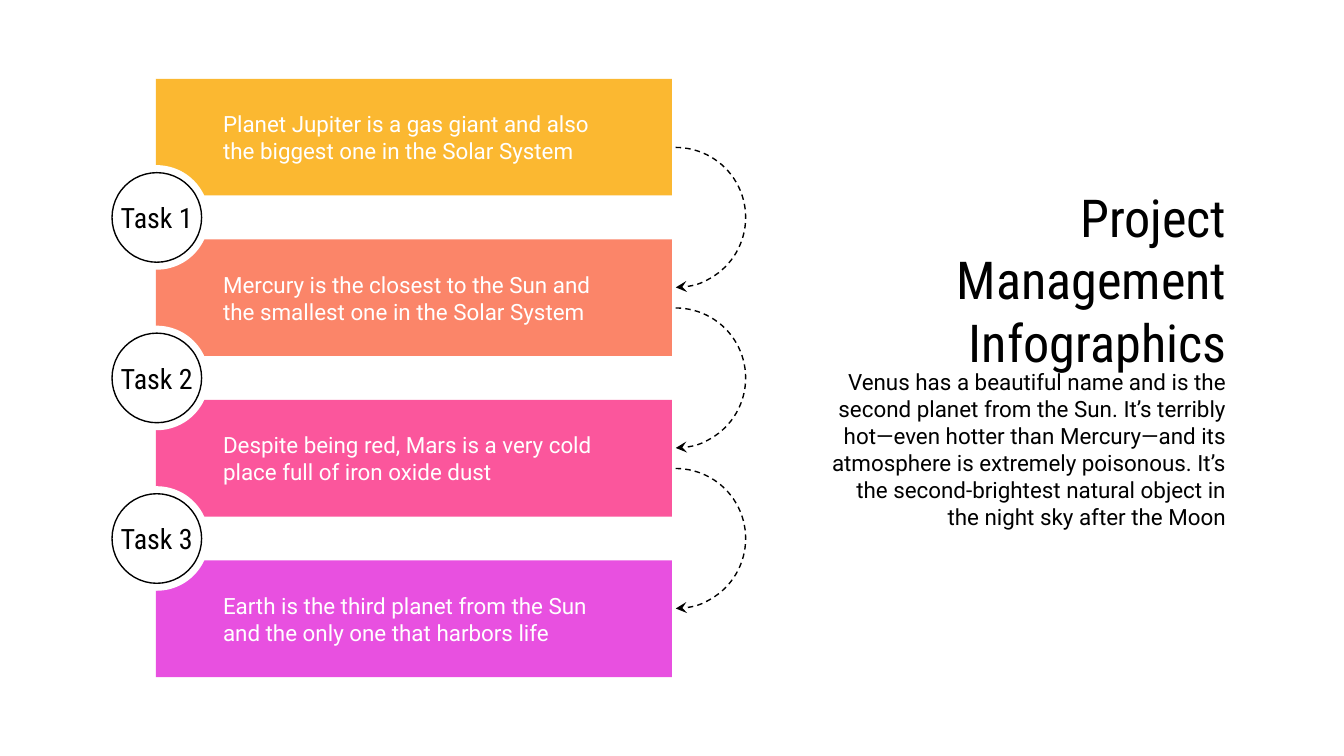
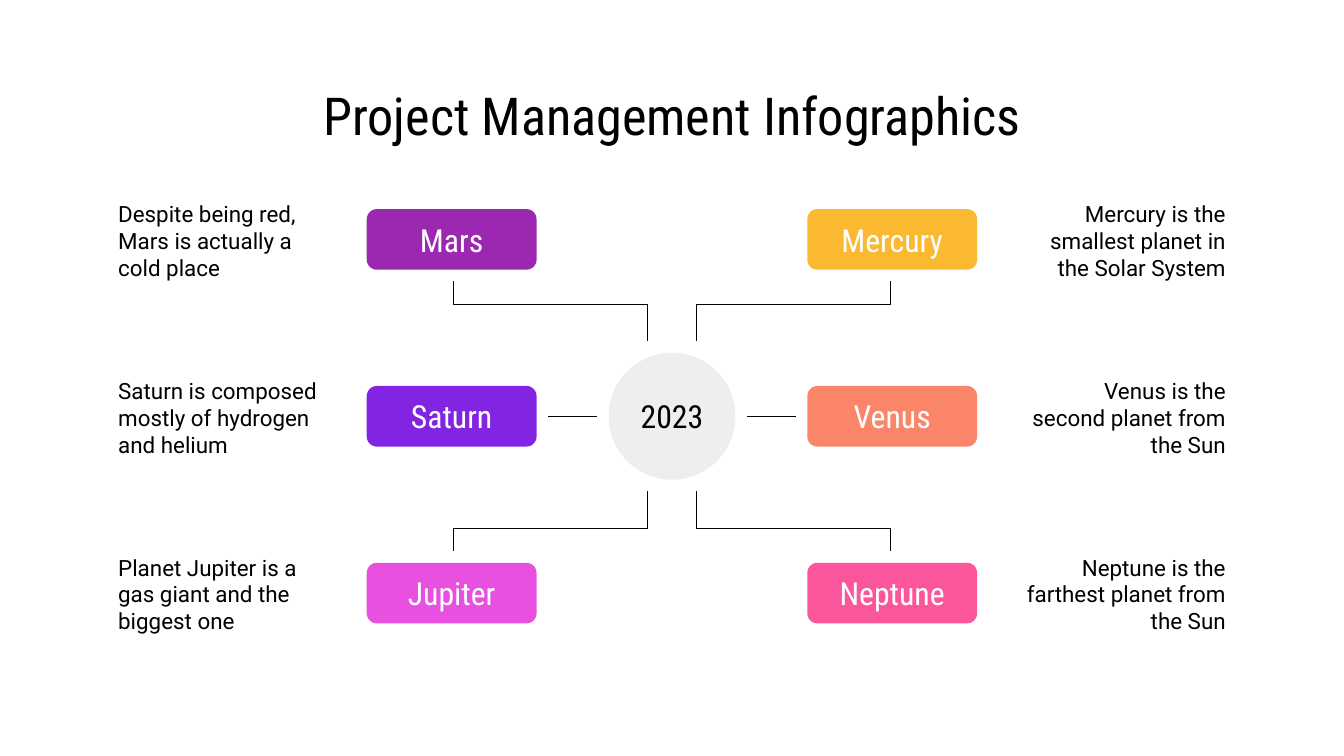
from dataclasses import dataclass

from lxml import etree
from pptx import Presentation
from pptx.dml.color import RGBColor
from pptx.enum.dml import MSO_LINE
from pptx.enum.shapes import MSO_CONNECTOR, MSO_SHAPE
from pptx.enum.text import MSO_ANCHOR, PP_ALIGN
from pptx.oxml.ns import qn
from pptx.util import Pt

LEFT, CENTER, RIGHT = PP_ALIGN.LEFT, PP_ALIGN.CENTER, PP_ALIGN.RIGHT
MIDDLE = MSO_ANCHOR.MIDDLE
RECT, ROUND_RECT = MSO_SHAPE.RECTANGLE, MSO_SHAPE.ROUNDED_RECTANGLE
OVAL, ARC = MSO_SHAPE.OVAL, MSO_SHAPE.ARC
STRAIGHT = MSO_CONNECTOR.STRAIGHT
DASH = MSO_LINE.DASH


@dataclass(frozen=True)
class Theme:
    head_font: str = "Roboto Condensed"
    body_font: str = "Roboto"
    title_size: float = 28
    label_size: float = 17
    task_size: float = 15
    body_size: float = 12
    line_width: float = 0.75
    black: str = "000000"
    white: str = "FFFFFF"
    grey: str = "EEEEEE"
    yellow: str = "FBB831"
    coral: str = "FB8569"
    pink: str = "FB569C"
    magenta: str = "E850E0"
    purple: str = "9C27B0"
    violet: str = "8225E2"


T = Theme()
TITLE = "Project Management Infographics"
WIDTH, HEIGHT = 720, 405
MARGIN = 56.25
INSET = 7.2

# Task slide
BARS = [
    ("Planet Jupiter is a gas giant and also the biggest one in the Solar System", T.yellow),
    ("Mercury is the closest to the Sun and the smallest one in the Solar System", T.coral),
    ("Despite being red, Mars is a very cold place full of iron oxide dust", T.pink),
    ("Earth is the third planet from the Sun and the only one that harbors life", T.magenta),
]
VENUS_STORY = (
    "Venus has a beautiful name and is the second planet from the Sun. It’s terribly "
    "hot—even hotter than Mercury—and its atmosphere is extremely poisonous. It’s "
    "the second-brightest natural object in the night sky after the Moon"
)
BAR_X, BAR_Y, BAR_W, BAR_H, BAR_PITCH = 83.5, 42.25, 276.5, 62.5, 86
HALO, DISC, ARC_SIZE = 56, 48, 75

# Planet slide: rows of (left planet, right planet)
PLANETS = [
    (("Mars", "Despite being red, Mars is actually a cold place", T.purple),
     ("Mercury", "Mercury is the smallest planet in the Solar System", T.yellow)),
    (("Saturn", "Saturn is composed mostly of hydrogen and helium", T.violet),
     ("Venus", "Venus is the second planet from the Sun", T.coral)),
    (("Jupiter", "Planet Jupiter is a gas giant and the biggest one", T.magenta),
     ("Neptune", "Neptune is the farthest planet from the Sun", T.pink)),
]
HUB_X, HUB_Y, HUB_SIZE = 360, 223, 68
ROW_PITCH, GAP = 94.75, 6.25
PILL_X, PILL_W, PILL_H = 196.5, 91, 32.5
NOTE_W, NOTE_H = 121, 59
ELBOW_OUTER, ELBOW_INNER, ELBOW_BEND = 117, 13, 60


def set_text(sp, text, size, font, color, align=LEFT, side_inset=INSET, wrap=True):
    tf = sp.text_frame
    frame_format = {
        "word_wrap": wrap, "vertical_anchor": MIDDLE,
        "margin_left": Pt(side_inset), "margin_right": Pt(side_inset),
        "margin_top": Pt(INSET), "margin_bottom": Pt(INSET),
    }
    for name, value in frame_format.items():
        setattr(tf, name, value)
    p = tf.paragraphs[0]
    p.alignment = align
    r = p.add_run()
    for name, value in {"text": text}.items():
        setattr(r, name, value)
    for name, value in {"size": Pt(size), "name": font}.items():
        setattr(r.font, name, value)
    r.font.color.rgb = RGBColor.from_string(color)


def set_line(sp):
    sp.line.color.rgb = RGBColor.from_string(T.black)
    sp.line.width = Pt(T.line_width)


def add_box(shapes, kind, x, y, w, h, fill=None, lined=False):
    sp = shapes.add_shape(kind, Pt(x), Pt(y), Pt(w), Pt(h))
    sp.shadow.inherit = False
    if fill:
        sp.fill.solid()
        sp.fill.fore_color.rgb = RGBColor.from_string(fill)
    else:
        sp.fill.background()
    if lined:
        set_line(sp)
    else:
        sp.line.fill.background()
    return sp


def add_circle(shapes, cx, cy, size, fill, lined=False):
    return add_box(shapes, OVAL, cx - size / 2, cy - size / 2, size, size, fill, lined)


def add_text(shapes, x, y, w, h, text, size=T.body_size, font=T.body_font, align=LEFT):
    sp = shapes.add_textbox(Pt(x), Pt(y), Pt(w), Pt(h))
    set_text(sp, text, size, font, T.black, align)


def add_title(shapes, x, y, w, h, align):
    add_text(shapes, x, y, w, h, TITLE, T.title_size, T.head_font, align)


def add_arc_arrow(shapes, cx, cy):
    """Dashed half circle from top to bottom, bulging right."""
    half = ARC_SIZE / 2
    sp = add_box(shapes, ARC, cx - half, cy - half, ARC_SIZE, ARC_SIZE, lined=True)
    sp.adjustments[0] = 162      # 270 degrees
    sp.adjustments[1] = 53.96    # just under 90 degrees
    sp.line.dash_style = DASH
    ln = sp._element.spPr.find(qn("a:ln"))
    etree.SubElement(ln, qn("a:tailEnd"), type="stealth")


def add_task_badge(shapes, cx, cy, text):
    group = shapes.add_group_shape().shapes
    add_circle(group, cx, cy, HALO, T.white)
    disc = add_circle(group, cx, cy, DISC, T.white, lined=True)
    set_text(disc, text, T.task_size, T.head_font, T.black, CENTER, 0, wrap=False)


def add_straight(shapes, x1, x2, y):
    cn = shapes.add_connector(STRAIGHT, Pt(x1), Pt(y), Pt(x2), Pt(y))
    set_line(cn)
    etree.SubElement(cn._element.spPr, qn("a:effectLst"))


def add_polyline(shapes, points):
    start, *rest = [(Pt(x), Pt(y)) for x, y in points]
    builder = shapes.build_freeform(*start)
    builder.add_line_segments(rest, close=False)
    sp = builder.convert_to_shape()
    sp.shadow.inherit = False
    sp.fill.background()
    set_line(sp)


def add_planet(shapes, row, side, name, note, color):
    """Pill, note and link; row is -1, 0 or 1 and side is -1 (left) or 1 (right)."""
    group = shapes.add_group_shape().shapes
    cy = HUB_Y + row * ROW_PITCH
    on_left = side < 0

    pill_x = PILL_X if on_left else WIDTH - PILL_X - PILL_W
    pill = add_box(group, ROUND_RECT, pill_x, cy - PILL_H / 2, PILL_W, PILL_H, color)
    set_text(pill, name, T.label_size, T.head_font, T.white, CENTER)

    hub_gap = HUB_SIZE / 2 + GAP
    if row:
        outer, inner = HUB_X + side * ELBOW_OUTER, HUB_X + side * ELBOW_INNER
        bend_y = HUB_Y + row * ELBOW_BEND
        add_polyline(group, [
            (outer, cy - row * (PILL_H / 2 + GAP)), (outer, bend_y),
            (inner, bend_y), (inner, HUB_Y + row * hub_gap),
        ])
    else:
        pill_gap = HUB_X - PILL_X - PILL_W - GAP
        add_straight(group, HUB_X + side * pill_gap, HUB_X + side * hub_gap, cy)

    note_x = MARGIN if on_left else WIDTH - MARGIN - NOTE_W
    add_text(group, note_x, cy - NOTE_H / 2 + 0.5, NOTE_W, NOTE_H, note,
             align=LEFT if on_left else RIGHT)


def build_task_slide(shapes):
    for i, (text, color) in enumerate(BARS):
        bar = add_box(shapes, RECT, BAR_X, BAR_Y + i * BAR_PITCH, BAR_W, BAR_H, color)
        set_text(bar, text, T.body_size, T.body_font, T.white, side_inset=36)
    for i in range(len(BARS) - 1):
        gap_y = BAR_Y + (BAR_H + BAR_PITCH) / 2 + i * BAR_PITCH
        add_arc_arrow(shapes, BAR_X + BAR_W + 2, gap_y)
        add_task_badge(shapes, BAR_X + 0.5, gap_y, f"Task {i + 1}")
    add_title(shapes, 427, 116, 237, 67, RIGHT)
    add_text(shapes, 436, 191.5, 228, 98, VENUS_STORY, align=RIGHT)


def build_planet_slide(shapes):
    add_title(shapes, MARGIN, 42.25, WIDTH - 2 * MARGIN, 38.25, CENTER)
    hub = add_circle(shapes, HUB_X, HUB_Y, HUB_SIZE, T.grey)
    set_text(hub, "2023", T.label_size, T.head_font, T.black, CENTER, wrap=False)
    for row, pair in enumerate(PLANETS, start=-1):
        for side, planet in zip((-1, 1), pair):
            add_planet(shapes, row, side, *planet)


def main():
    prs = Presentation()
    prs.slide_width, prs.slide_height = Pt(WIDTH), Pt(HEIGHT)
    blank = prs.slide_layouts[6]
    for build in (build_task_slide, build_planet_slide):
        build(prs.slides.add_slide(blank).shapes)
    prs.save("out.pptx")


if __name__ == "__main__":
    main()
